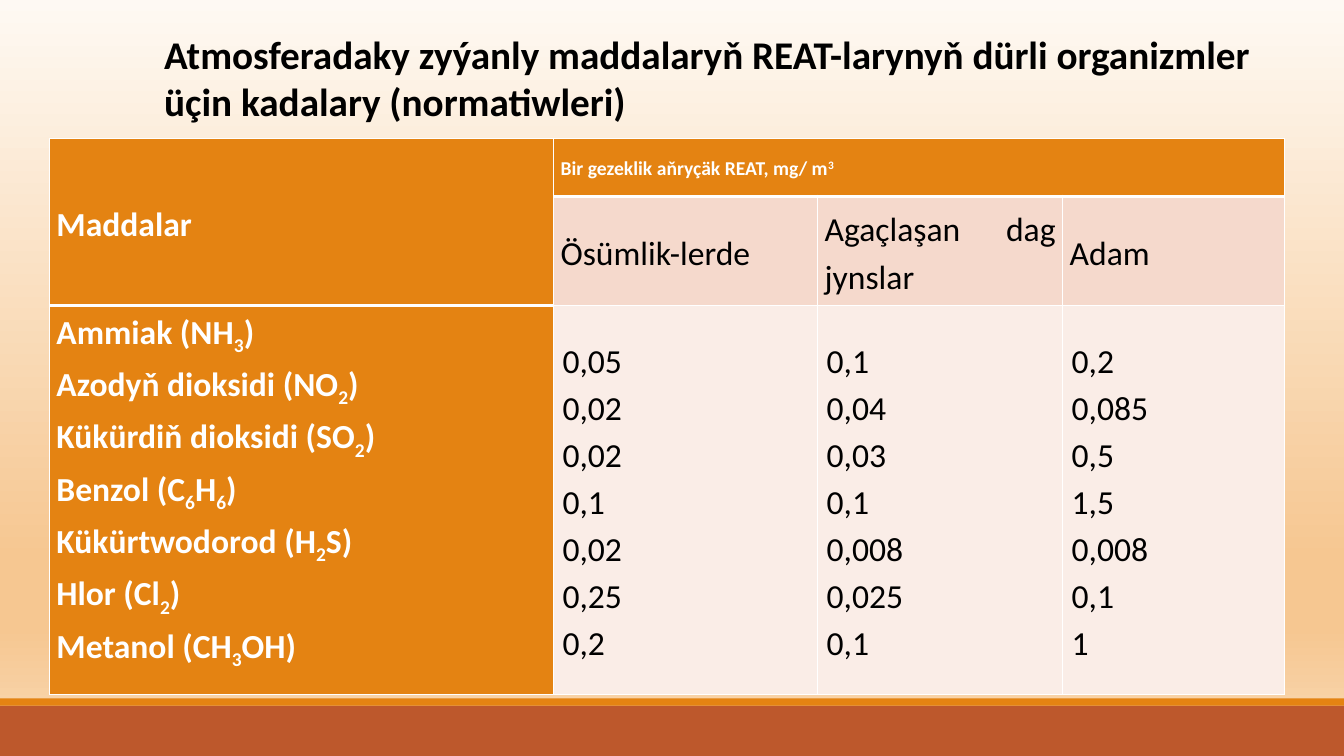
from lxml import etree
from pptx import Presentation
from pptx.dml.color import RGBColor
from pptx.enum.shapes import MSO_SHAPE
from pptx.enum.text import MSO_ANCHOR, PP_ALIGN
from pptx.oxml.ns import qn
from pptx.util import Inches, Pt

RECTANGLE = MSO_SHAPE.RECTANGLE
TOP, MIDDLE = MSO_ANCHOR.TOP, MSO_ANCHOR.MIDDLE
LEFT, JUSTIFY = PP_ALIGN.LEFT, PP_ALIGN.JUSTIFY

# Content: "|" separates runs, a leading "_" lowers a run and "^" raises it
TITLE = ["Atmosferadaky zyýanly maddalaryň REAT-larynyň dürli organizmler",
         "üçin kadalary (normatiwleri)"]
CORNER = "Maddalar"
LIMIT = "Bir gezeklik aňryçäk REAT, mg/ m|^3"
ORGANISMS = ["Ösümlik-lerde", "Agaçlaşan dag jynslar", "Adam"]
SUBSTANCES = [
    ("Ammiak (NH|_3|)", "0,05", "0,1", "0,2"),
    ("Azodyň dioksidi (NO|_2|)", "0,02", "0,04", "0,085"),
    ("Kükürdiň dioksidi (SO|_2|)", "0,02", "0,03", "0,5"),
    ("Benzol (C|_6|H|_6|)", "0,1", "0,1", "1,5"),
    ("Kükürtwodorod (H|_2|S)", "0,02", "0,008", "0,008"),
    ("Hlor (Cl|_2|)", "0,25", "0,025", "0,1"),
    ("Metanol (CH|_3|OH)", "0,2", "0,1", "1"),
]

COLORS = {"orange": "E48312", "rust": "BD582C", "rose": "F5D9CC",
          "blush": "FAEDE7", "white": "FFFFFF", "black": "000000"}
BACKDROP = [(0, "FEF9F3"), (74, "F6C791"), (83, "F6C791"), (100, "F9DAB6")]
BANDS = [(7, 0.5, "rust"), (6.93, 0.07, "orange")]
COLUMN_WIDTHS = [5, 2.62, 2.43, 2.2]
ROW_HEIGHTS = [0.58, 1.08, 3.86]
BASELINES = {"_": "-25000", "^": "30000"}


def color(name):
    return RGBColor.from_string(COLORS[name])


def write(frame, lines, size, ink, bold, align=LEFT, spacing=1.0, indent=0.0):
    font_format = {"name": "Calibri", "size": Pt(size), "bold": bold}
    for number, line in enumerate(lines):
        paragraph = frame.paragraphs[0] if number == 0 else frame.add_paragraph()
        paragraph.alignment, paragraph.line_spacing = align, spacing
        if indent:
            paragraph._p.get_or_add_pPr().set("indent", str(Inches(indent)))
        for piece in line.split("|"):
            run = paragraph.add_run()
            run.text = piece.lstrip("_^")
            for key, value in font_format.items():
                setattr(run.font, key, value)
            run.font.color.rgb = color(ink)
            if piece[0] in BASELINES:
                run._r.get_or_add_rPr().set("baseline", BASELINES[piece[0]])


def add_border(cell, side, width):
    line = etree.SubElement(cell._tc.get_or_add_tcPr(), qn("a:ln" + side),
                            w=str(Pt(width)))
    fill = etree.SubElement(line, qn("a:solidFill"))
    etree.SubElement(fill, qn("a:srgbClr"), val=COLORS["white"])


def is_header(row, column):
    return row == 0 or column == 0


def heavy_below(row, column):
    return (row == 0 and column > 0) or (row < 2 and column == 0)


prs = Presentation()
prs.slide_width, prs.slide_height = Inches(13.33), Inches(7.5)
slide = prs.slides.add_slide(prs.slide_layouts[6])

# Background gradient, top to bottom
backdrop = slide.background.fill
backdrop.gradient()
backdrop.gradient_angle = 270
stops = next(slide.element.iter(qn("a:gsLst")))
for stop in list(stops):
    stops.remove(stop)
for position, shade in BACKDROP:
    stop = etree.SubElement(stops, qn("a:gs"), pos=str(position * 1000))
    etree.SubElement(stop, qn("a:srgbClr"), val=shade)

# Footer bands
for top, height, shade in BANDS:
    band = slide.shapes.add_shape(RECTANGLE, 0, Inches(top),
                                  prs.slide_width, Inches(height))
    band.shadow.inherit = False
    band.fill.solid()
    band.fill.fore_color.rgb = color(shade)
    band.line.fill.background()

# Table of limits
table = slide.shapes.add_table(
    len(ROW_HEIGHTS), len(COLUMN_WIDTHS), Inches(0.49), Inches(1.37),
    Inches(sum(COLUMN_WIDTHS)), Inches(sum(ROW_HEIGHTS))).table
table.first_row = table.horz_banding = False
for column, width in zip(table.columns, COLUMN_WIDTHS):
    column.width = Inches(width)
for row, height in zip(table.rows, ROW_HEIGHTS):
    row.height = Inches(height)
table.cell(0, 0).merge(table.cell(1, 0))
table.cell(0, 1).merge(table.cell(0, 3))

cell_lines = {(0, 0): [CORNER], (0, 1): [LIMIT]}
for c, organism in enumerate(ORGANISMS, 1):
    cell_lines[1, c] = [organism]
for c, entries in enumerate(zip(*SUBSTANCES)):
    cell_lines[2, c] = entries

for r in range(len(ROW_HEIGHTS)):
    for c in range(len(COLUMN_WIDTHS)):
        cell = table.cell(r, c)
        header = is_header(r, c)
        cell_format = {"margin_left": Inches(0.07), "margin_right": Inches(0.07),
                       "margin_top": 0, "margin_bottom": 0,
                       "vertical_anchor": TOP if (r, c) == (2, 0) else MIDDLE}
        for key, value in cell_format.items():
            setattr(cell, key, value)
        widths = {"L": 1, "R": 1,
                  "T": 3 if r > 0 and heavy_below(r - 1, c) else 1,
                  "B": 3 if heavy_below(r, c) else 1}
        for side, width in widths.items():
            add_border(cell, side, width)
        cell.fill.solid()
        cell.fill.fore_color.rgb = color(
            "orange" if header else "rose" if r == 1 else "blush")
        if (r, c) in cell_lines:
            write(cell.text_frame, cell_lines[r, c],
                  size=14 if (r, c) == (0, 1) else 24,
                  ink="white" if header else "black", bold=header,
                  align=JUSTIFY, spacing=1.15,
                  indent=0.02 if r == 2 and c > 0 else 0)

# Title
title = slide.shapes.add_textbox(Inches(1.15), Inches(0.25),
                                 Inches(11.59), Inches(1.05)).text_frame
title.word_wrap = True
title.vertical_anchor = TOP
write(title, TITLE, size=28, ink="black", bold=True, indent=0.38)

prs.save("out.pptx")
